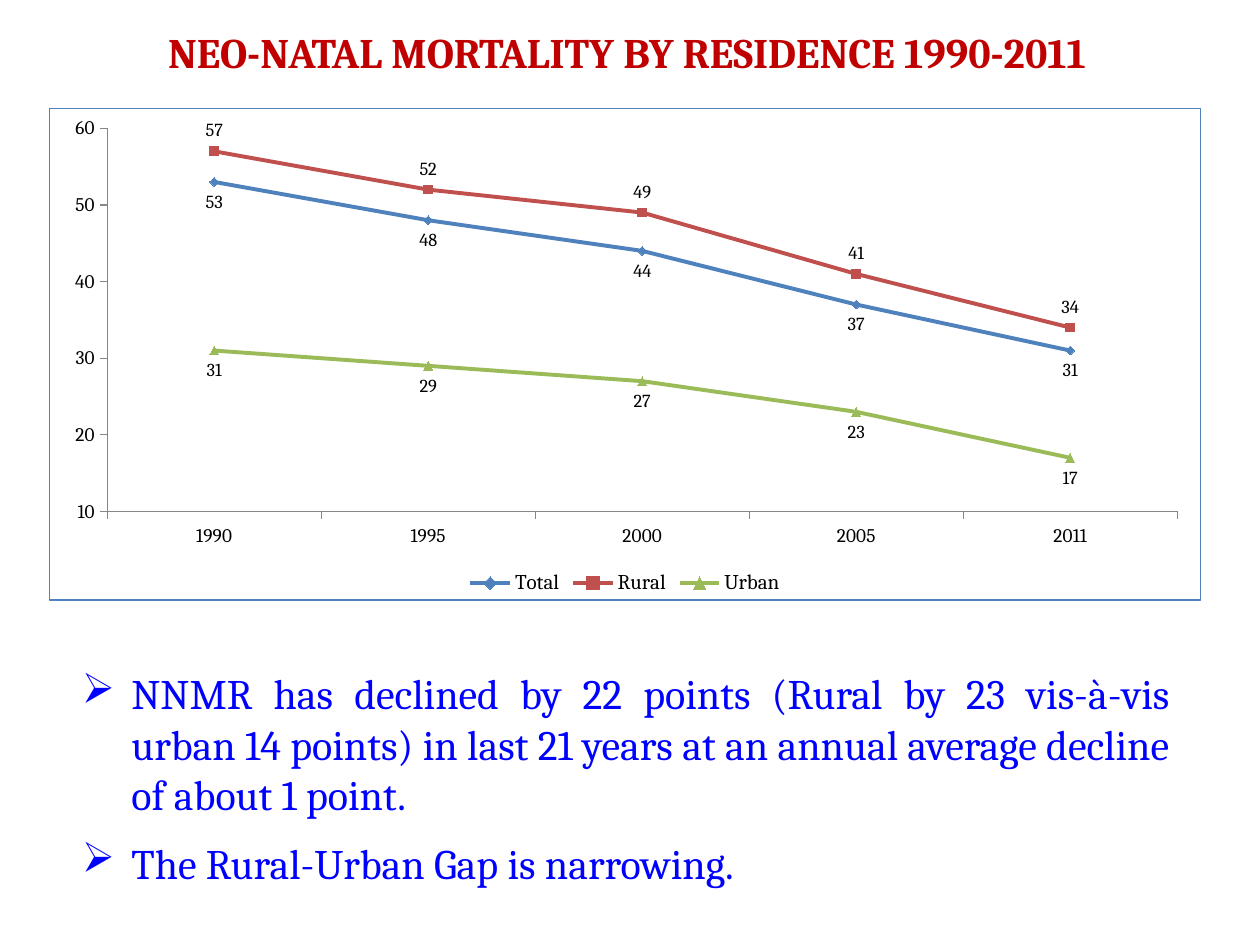
from lxml.etree import SubElement
from pptx import Presentation
from pptx.chart.data import CategoryChartData
from pptx.dml.color import RGBColor
from pptx.enum.chart import XL_CHART_TYPE as ChartType, XL_LABEL_POSITION as LabelPos
from pptx.enum.chart import XL_LEGEND_POSITION as LegendPos, XL_MARKER_STYLE as Marker
from pptx.enum.chart import XL_TICK_MARK as Tick
from pptx.enum.text import MSO_AUTO_SIZE as AutoSize, PP_ALIGN as Align
from pptx.oxml import parse_xml
from pptx.oxml.ns import nsdecls, qn
from pptx.util import Cm, Pt

FONT = "Cambria"


def color(value):
    return RGBColor.from_string(value)


def add_text_box(left, top, width, height):
    box = page.shapes.add_textbox(Cm(left), Cm(top), Cm(width), Cm(height))
    box.text_frame.word_wrap = True
    box.text_frame.auto_size = AutoSize.SHAPE_TO_FIT_TEXT
    return box.text_frame


deck = Presentation()
deck.slide_width, deck.slide_height = Cm(25.4), Cm(19.05)
page = deck.slides.add_slide(deck.slide_layouts[6])

# Findings
findings = [
    "NNMR has declined by 22 points (Rural by 23 vis-à-vis urban 14 points) "
    "in last 21 years at an annual average decline of about 1 point. ",
    "The Rural-Urban Gap is narrowing.",
]
frame = add_text_box(1.4, 13.34, 22.43, 4.88)
for index, finding in enumerate(findings):
    para = frame.add_paragraph() if index else frame.paragraphs[0]
    para.alignment = Align.JUSTIFY
    para.space_before = Pt(10.5 if index else 0)
    props = para._p.get_or_add_pPr()
    props.set("marL", str(Cm(1)))
    props.set("indent", str(-Cm(1)))
    SubElement(props, qn("a:buChar")).set("char", "➢")
    span = para.add_run()
    span.text = finding
    span.font.size, span.font.name = Pt(24), FONT
    span.font.color.rgb = color("0000FF")

# Title
para = add_text_box(0.79, 0.41, 23.7, 1.27).paragraphs[0]
para.alignment = Align.CENTER
span = para.add_run()
span.text = "NEO-NATAL MORTALITY BY RESIDENCE 1990-2011"
span.font.size, span.font.name, span.font.bold = Pt(24), FONT, True
span.font.color.rgb = color("C00000")

# Chart data
residences = [
    ("Total", (53, 48, 44, 37, 31), "4F81BD", Marker.DIAMOND, LabelPos.BELOW),
    ("Rural", (57, 52, 49, 41, 34), "C0504D", Marker.SQUARE, LabelPos.ABOVE),
    ("Urban", (31, 29, 27, 23, 17), "9BBB59", Marker.TRIANGLE, LabelPos.BELOW),
]
data = CategoryChartData()
data.categories = ["1990", "1995", "2000", "2005", "2011"]
for name, values, *_ in residences:
    data.add_series(name, values)
chart = page.shapes.add_chart(
    ChartType.LINE_MARKERS, Cm(0.99), Cm(2.18), Cm(23.22), Cm(9.93), data
).chart
chart.has_title = False
chart.font.size, chart.font.name = Pt(10), "Calibri"
chart.font.color.rgb = color("000000")
chart.plots[0].vary_by_categories = False

# Lines, markers and value labels
for series, (_, _, hue, marker, position) in zip(chart.plots[0].series, residences):
    series.smooth = False
    series.format.line.width = Pt(2.25)
    series.marker.style, series.marker.size = marker, 5
    series.marker.format.fill.solid()
    series.marker.format.fill.fore_color.rgb = color(hue)
    for line in (series.format.line, series.marker.format.line):
        line.color.rgb = color(hue)
    labels = series.data_labels
    labels.show_value, labels.position = True, position
    labels.font.size, labels.font.name = Pt(10.5), FONT

# Axes
for axis in (chart.category_axis, chart.value_axis):
    axis.has_major_gridlines = False
    axis.major_tick_mark, axis.minor_tick_mark = Tick.OUTSIDE, Tick.NONE
    axis.tick_labels.font.size, axis.tick_labels.font.name = Pt(11), FONT
    axis.format.line.color.rgb = color("868686")
    axis.format.line.width = Pt(0.75)
chart.value_axis.minimum_scale, chart.value_axis.maximum_scale = 10, 60
chart.value_axis.major_unit = 10

# Legend
chart.has_legend = True
chart.legend.position = LegendPos.BOTTOM
chart.legend.include_in_layout = False
chart.legend.font.size, chart.legend.font.name = Pt(12), FONT

# Plot position as shares of the chart area
plot_area = chart._chartSpace.chart.plotArea
for old_layout in plot_area.findall(qn("c:layout")):
    plot_area.remove(old_layout)
layout = SubElement(plot_area, qn("c:layout"))
plot_area.insert(0, layout)
manual = SubElement(layout, qn("c:manualLayout"))
for tag, value in [
    ("layoutTarget", "inner"), ("xMode", "edge"), ("yMode", "edge"),
    ("x", "0.05"), ("y", "0.04"), ("w", "0.93"), ("h", "0.78"),
]:
    SubElement(manual, qn(f"c:{tag}")).set("val", value)

# Chart border
chart._chartSpace.chart.addnext(parse_xml(
    f'<c:spPr {nsdecls("c", "a")}><a:noFill/><a:ln w="{Pt(0.75)}">'
    '<a:solidFill><a:srgbClr val="4F81BD"/></a:solidFill></a:ln></c:spPr>'
))

deck.save("out.pptx")
